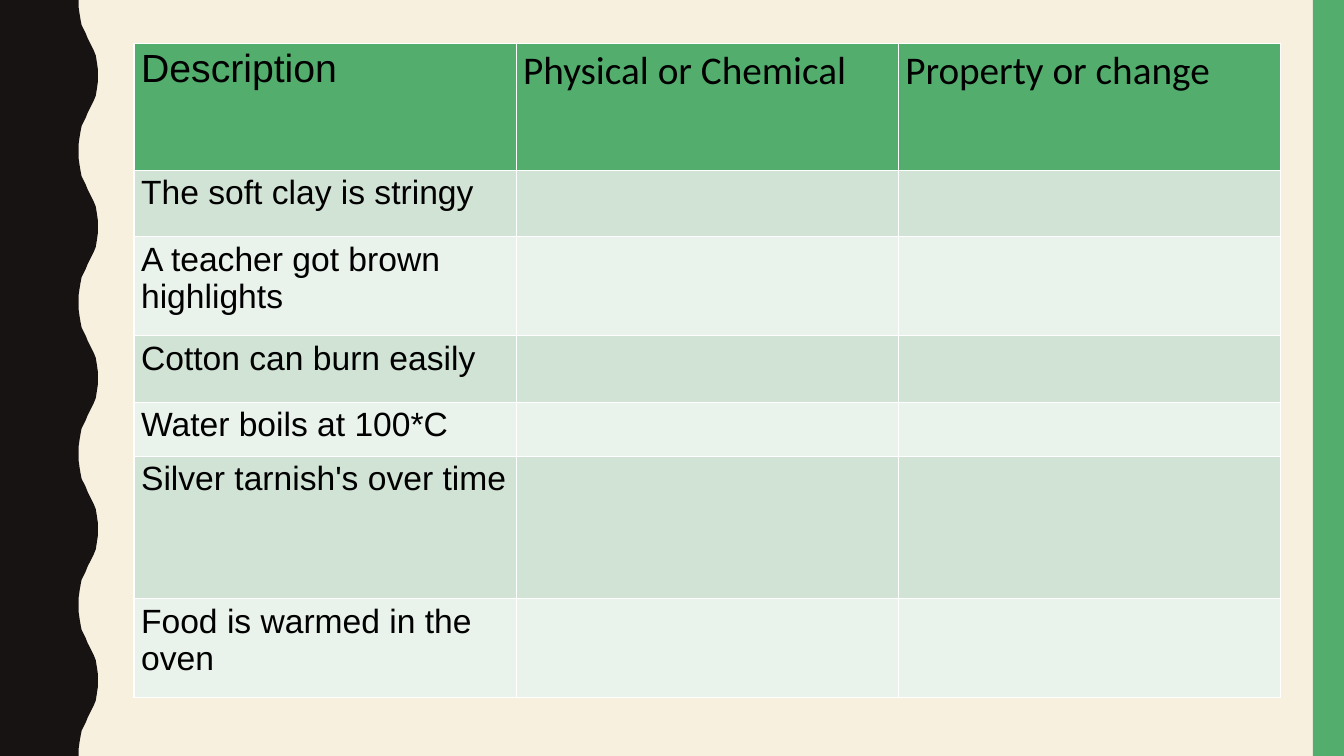
from pptx import Presentation
from pptx.dml.color import RGBColor
from pptx.enum.shapes import MSO_SHAPE
from pptx.util import Inches, Pt

HUES = {"cream": "F7F0DF", "dark": "171312", "green": "53AE6E",
        "mint": "D1E3D5", "pale": "E9F2EB", "text": "000000"}
HEADS = ["Description", "Physical or Chemical", "Property or change"]
ITEMS = ["The soft clay is stringy", "A teacher got brown highlights",
         "Cotton can burn easily", "Water boils at 100*C",
         "Silver tarnish's over time", "Food is warmed in the oven"]
ROWS = [1.26, 0.66, 0.98, 0.66, 0.54, 1.41, 0.98]
RISE = [(0, 0), (0, 0.07), (0.01, 0.14), (0.02, 0.2), (0.03, 0.25),
        (0.05, 0.29), (0.07, 0.33), (0.09, 0.38), (0.11, 0.42),
        (0.13, 0.46), (0.15, 0.5), (0.17, 0.55), (0.18, 0.61),
        (0.19, 0.68), (0.19, 0.75)]
WAVES = 5
FORMS = {
    "head": {"size": Pt(28), "name": "Arial", "bold": False},
    "side": {"size": Pt(28), "name": "Calibri", "bold": False},
    "item": {"size": Pt(24), "name": "Arial", "bold": False},
}


def tint(fill, hue):
    fill.solid()
    fill.fore_color.rgb = RGBColor.from_string(HUES[hue])


def paint(shape, hue):
    tint(shape.fill, hue)
    shape.line.fill.background()
    shape.shadow.inherit = False


def draw_wave(slide, left, top, width, height):
    step = height / WAVES
    base = left + width - RISE[-1][0]
    fall = [(x, step - y) for x, y in RISE[-2::-1]]
    edge = [(base + x, top + turn * step + y)
            for turn in range(WAVES) for x, y in RISE + fall]
    points = [(Inches(x), Inches(y)) for x, y in edge + [(left, top + height)]]
    form = slide.shapes.build_freeform(Inches(left), Inches(top))
    form.add_line_segments(points, close=True)
    paint(form.convert_to_shape(), "dark")


def draw_bar(slide, left, top, width, height):
    box = [Inches(v) for v in (left, top, width, height)]
    paint(slide.shapes.add_shape(MSO_SHAPE.RECTANGLE, *box), "green")


def write(cell, text, form):
    run = cell.text_frame.paragraphs[0].add_run()
    run.text = text
    for key, value in FORMS[form].items():
        setattr(run.font, key, value)
    run.font.color.rgb = RGBColor.from_string(HUES["text"])


def draw_table(slide, left, top, width, height):
    box = [Inches(v) for v in (left, top, width, height)]
    table = slide.shapes.add_table(len(ROWS), len(HEADS), *box).table
    for col in table.columns:
        col.width = Inches(width / len(HEADS))
    for i, (row, tall) in enumerate(zip(table.rows, ROWS)):
        row.height = Inches(tall)
        hue = ("mint" if i % 2 else "pale") if i else "green"
        for cell in row.cells:
            tint(cell.fill, hue)
            for side in ("left", "right"):
                setattr(cell, f"margin_{side}", Inches(0.07))
            for side in ("top", "bottom"):
                setattr(cell, f"margin_{side}", Inches(0.04))
    for i, text in enumerate(HEADS):
        write(table.cell(0, i), text, "side" if i else "head")
    for i, text in enumerate(ITEMS, 1):
        write(table.cell(i, 0), text, "item")


def main():
    deck = Presentation()
    deck.slide_width, deck.slide_height = Inches(13.33), Inches(7.5)
    slide = deck.slides.add_slide(deck.slide_layouts[6])
    tint(slide.background.fill, "cream")
    draw_wave(slide, 0, 0, 0.97, 7.5)
    draw_bar(slide, 13.02, 0, 0.31, 7.5)
    draw_table(slide, 1.33, 0.43, 11.37, sum(ROWS))
    deck.save("out.pptx")


if __name__ == "__main__":
    main()
